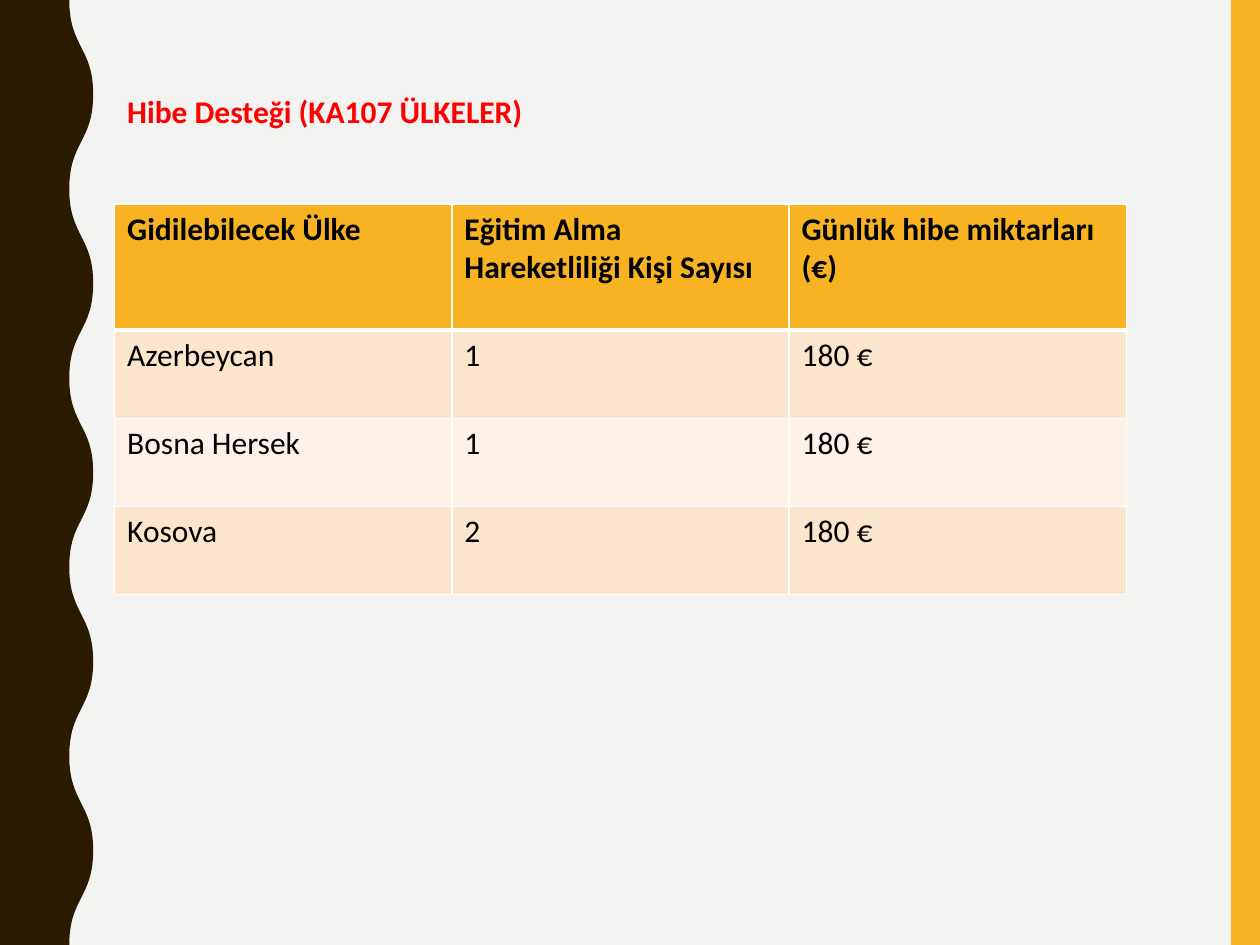
from dataclasses import dataclass

from lxml.etree import SubElement
from pptx import Presentation
from pptx.dml.color import RGBColor
from pptx.enum.shapes import MSO_SHAPE
from pptx.enum.text import MSO_ANCHOR, MSO_AUTO_SIZE, PP_ALIGN
from pptx.oxml.ns import qn
from pptx.util import Inches, Pt


@dataclass(frozen=True)
class Theme:
    font: str = "Calibri"
    size: int = 18
    background: str = "F3F3F2"
    accent: str = "F8B323"
    wave: str = "2A1A00"
    title: str = "FF0000"
    text: str = "000000"
    border: str = "FFFFFF"
    bands: tuple = ("FCE5CD", "FEF2E8")


THEME = Theme()
WIDTH, HEIGHT = 10, 7.5
LEFT = 0.91
TABLE_TOP, TABLE_WIDTH = 1.62, 8.03
HEADER_HEIGHT, ROW_HEIGHT = 1, 0.7

TITLE = "Hibe Desteği (KA107 ÜLKELER)"
ROWS = [
    ("Gidilebilecek Ülke", "Eğitim Alma Hareketliliği Kişi Sayısı",
     "Günlük hibe miktarları (€)"),
    ("Azerbeycan", "1", "180 €"),
    ("Bosna Hersek", "1", "180 €"),
    ("Kosova", "2", "180 €"),
]


def paint(fill, color):
    fill.solid()
    fill.fore_color.rgb = RGBColor.from_string(color)


def style_shape(sp, color):
    paint(sp.fill, color)
    sp.line.fill.background()
    sp.shadow.inherit = False


def add_text(tf, text, color, bold):
    p = tf.paragraphs[0]
    p.alignment = PP_ALIGN.LEFT
    r = p.add_run()
    r.text = text
    r.font.name = THEME.font
    r.font.size = Pt(THEME.size)
    r.font.bold = bold
    r.font.color.rgb = RGBColor.from_string(color)


def add_side_bar(s):
    width = 0.23
    sp = s.shapes.add_shape(MSO_SHAPE.RECTANGLE, Inches(WIDTH - width), 0,
                            Inches(width), Inches(HEIGHT))
    style_shape(sp, THEME.accent)


def bend(segment, start, end):
    """Turn a straight freeform segment into an S-curve with vertical ends."""
    segment.tag = qn("a:cubicBezTo")
    segment.clear()
    middle = (start[1] + end[1]) // 2
    for x, y in ((start[0], middle), (end[0], middle), end):
        SubElement(segment, qn("a:pt"), x=str(x), y=str(y))


def add_wave(s, inner=0.55, outer=0.74, half_waves=10):
    """Draw the left band; its edge swings between inner and outer."""
    nodes = [(Inches(outer if i % 2 else inner), Inches(HEIGHT * i / half_waves))
             for i in range(half_waves + 1)]
    builder = s.shapes.build_freeform(*nodes[0])
    builder.add_line_segments([*nodes[1:], (0, Inches(HEIGHT)), (0, 0)])
    sp = builder.convert_to_shape()
    segments = list(sp._element.iter(qn("a:lnTo")))
    for segment, start, end in zip(segments, nodes, nodes[1:]):
        bend(segment, start, end)
    style_shape(sp, THEME.wave)


def set_title(s):
    sp = s.shapes.title
    sp.left, sp.top = Inches(LEFT), Inches(0.68)
    sp.width, sp.height = Inches(4.49), Inches(0.4)
    tf = sp.text_frame
    tf.word_wrap = False
    tf.auto_size = MSO_AUTO_SIZE.SHAPE_TO_FIT_TEXT
    tf.vertical_anchor = MSO_ANCHOR.TOP
    add_text(tf, TITLE, THEME.title, True)


def set_borders(cell, top, bottom):
    tc_pr = cell._tc.get_or_add_tcPr()
    for tag, width in (("lnL", 1), ("lnR", 1), ("lnT", top), ("lnB", bottom)):
        ln = SubElement(tc_pr, qn(f"a:{tag}"), w=str(Pt(width)))
        fill = SubElement(ln, qn("a:solidFill"))
        SubElement(fill, qn("a:srgbClr"), val=THEME.border)


def add_grant_table(s):
    height = HEADER_HEIGHT + ROW_HEIGHT * (len(ROWS) - 1)
    table = s.shapes.add_table(len(ROWS), len(ROWS[0]), Inches(LEFT), Inches(TABLE_TOP),
                               Inches(TABLE_WIDTH), Inches(height)).table
    for i, row in enumerate(ROWS):
        header = i == 0
        table.rows[i].height = Inches(HEADER_HEIGHT if header else ROW_HEIGHT)
        for j, text in enumerate(row):
            cell = table.cell(i, j)
            set_borders(cell, top=3 if i == 1 else 1, bottom=3 if header else 1)
            paint(cell.fill, THEME.accent if header else THEME.bands[(i - 1) % 2])
            add_text(cell.text_frame, text, THEME.text, header)


def main():
    prs = Presentation()
    prs.slide_width, prs.slide_height = Inches(WIDTH), Inches(HEIGHT)
    s = prs.slides.add_slide(prs.slide_layouts[5])
    paint(s.background.fill, THEME.background)
    add_side_bar(s)
    add_wave(s)
    set_title(s)
    add_grant_table(s)
    prs.save("out.pptx")


if __name__ == "__main__":
    main()
